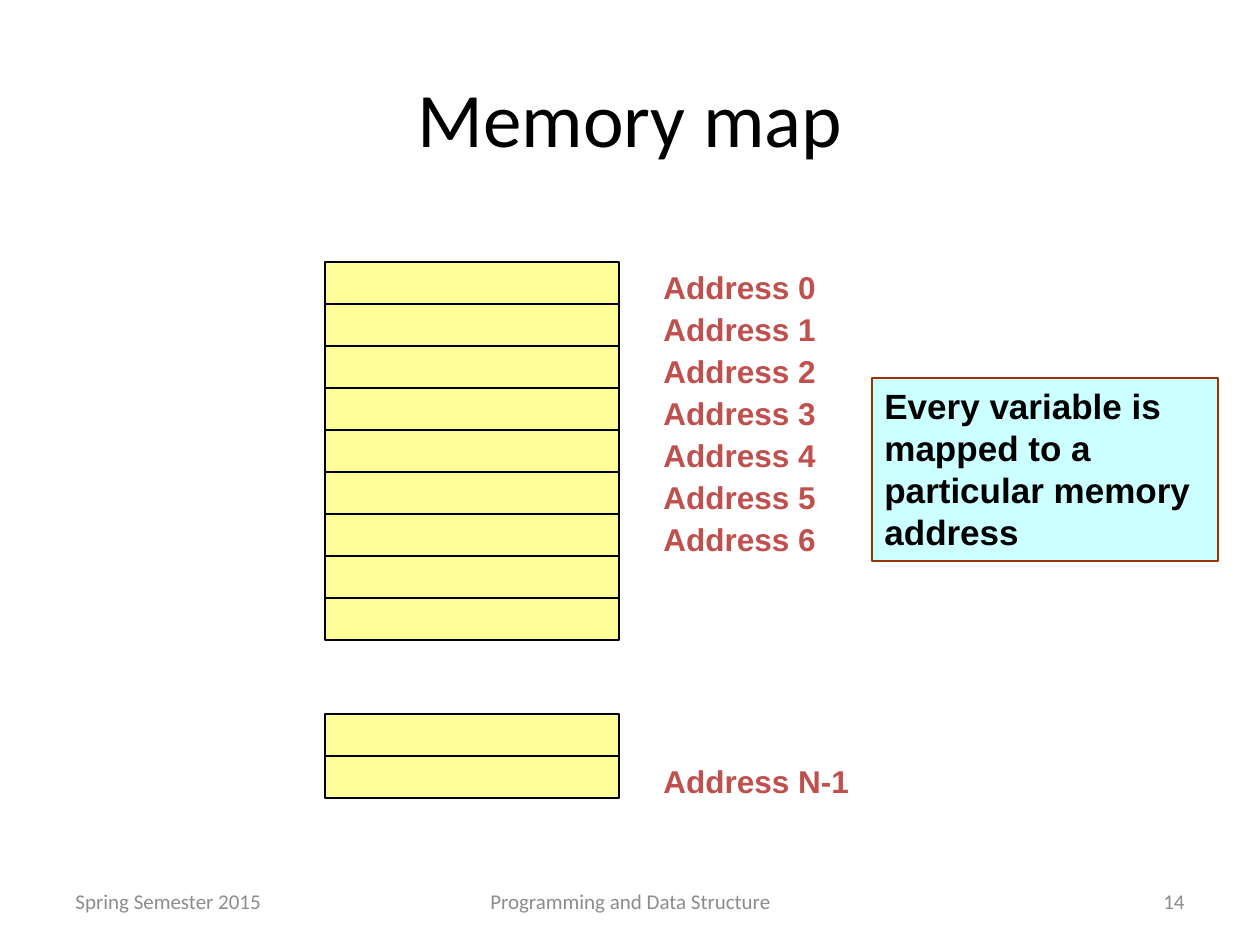
from dataclasses import dataclass

from pptx import Presentation
from pptx import util as u
from pptx.dml.color import RGBColor
from pptx.enum import shapes, text

EMU_PER_PX = 914400 / 126

COLORS = {
    "black": "000000",
    "cell": "FFFF99",
    "address": "C0504D",
    "note": "CCFFFF",
    "note_border": "993300",
    "footer": "8C8C8C",
}

FORMATS = {
    "title": {"name": "Calibri", "size": u.Pt(44), "bold": False},
    "address": {"name": "Arial", "size": u.Pt(18), "bold": True},
    "note": {"name": "Arial", "size": u.Pt(20), "bold": True},
    "footer": {"name": "Calibri", "size": u.Pt(12), "bold": False},
}

LEFT, CENTER, RIGHT = text.PP_ALIGN.LEFT, text.PP_ALIGN.CENTER, text.PP_ALIGN.RIGHT
TOP, MIDDLE = text.MSO_ANCHOR.TOP, text.MSO_ANCHOR.MIDDLE


@dataclass
class Box:
    left: int
    top: int
    width: int
    height: int

    def emu(self) -> list[u.Emu]:
        return [px(v) for v in (self.left, self.top, self.width, self.height)]


@dataclass
class Footer:
    words: str
    box: Box
    align: text.PP_ALIGN


def px(length: int) -> u.Emu:
    return u.Emu(round(length * EMU_PER_PX))


def rgb(name: str) -> RGBColor:
    return RGBColor.from_string(COLORS[name])


def write(shape, words: str, style: str, color: str, align=LEFT, anchor=TOP) -> None:
    frame = shape.text_frame
    frame.word_wrap = True
    frame.vertical_anchor = anchor
    paragraph = frame.paragraphs[0]
    paragraph.alignment = align
    run = paragraph.add_run()
    run.text = words
    for attribute, value in FORMATS[style].items():
        setattr(run.font, attribute, value)
    run.font.color.rgb = rgb(color)


def add_label(slide, box: Box, words: str, style: str, color: str, **layout) -> None:
    write(slide.shapes.add_textbox(*box.emu()), words, style, color, **layout)


def add_rectangle(slide, box: Box, fill: str, line: str):
    rectangle = slide.shapes.add_shape(shapes.MSO_SHAPE.RECTANGLE, *box.emu())
    rectangle.shadow.inherit = False
    rectangle.fill.solid()
    rectangle.fill.fore_color.rgb = rgb(fill)
    rectangle.line.color.rgb = rgb(line)
    rectangle.line.width = u.Pt(1.5)
    return rectangle


# Memory cells: nine from address 0, then a gap, then the last two
CELL_LEFT, CELL_WIDTH, CELL_HEIGHT = 325, 294, 42
FIRST_TOP, LAST_TOP = 262, 756
CELL_TOPS = [FIRST_TOP + i * CELL_HEIGHT for i in range(9)]
CELL_TOPS += [LAST_TOP - CELL_HEIGHT, LAST_TOP]

ADDRESSES = [(f"Address {i}", CELL_TOPS[i]) for i in range(7)]
ADDRESSES.append(("Address N-1", LAST_TOP))

FOOTERS = [
    Footer("Spring Semester 2015", Box(63, 876, 294, 50), LEFT),
    Footer("Programming and Data Structure", Box(431, 876, 399, 50), CENTER),
    Footer("14", Box(903, 876, 294, 50), RIGHT),
]


def main() -> None:
    deck = Presentation()
    deck.slide_width, deck.slide_height = px(1260), px(945)
    slide = deck.slides.add_slide(deck.slide_layouts[5])

    # Title
    title = slide.shapes.title
    title.left, title.top, title.width, title.height = Box(63, 38, 1134, 157).emu()
    write(title, "Memory map", "title", "black", CENTER, MIDDLE)

    # Footer line
    for footer in FOOTERS:
        add_label(slide, footer.box, footer.words, "footer", "footer",
                  align=footer.align, anchor=MIDDLE)

    # Memory and its addresses
    for top in CELL_TOPS:
        add_rectangle(slide, Box(CELL_LEFT, top, CELL_WIDTH, CELL_HEIGHT), "cell", "black")
    for words, top in ADDRESSES:
        add_label(slide, Box(651, top, 220, 50), words, "address", "address")

    # Note
    note = add_rectangle(slide, Box(872, 378, 346, 183), "note", "note_border")
    write(note, "Every variable is mapped to a particular memory address", "note", "black")

    deck.save("out.pptx")


if __name__ == "__main__":
    main()
